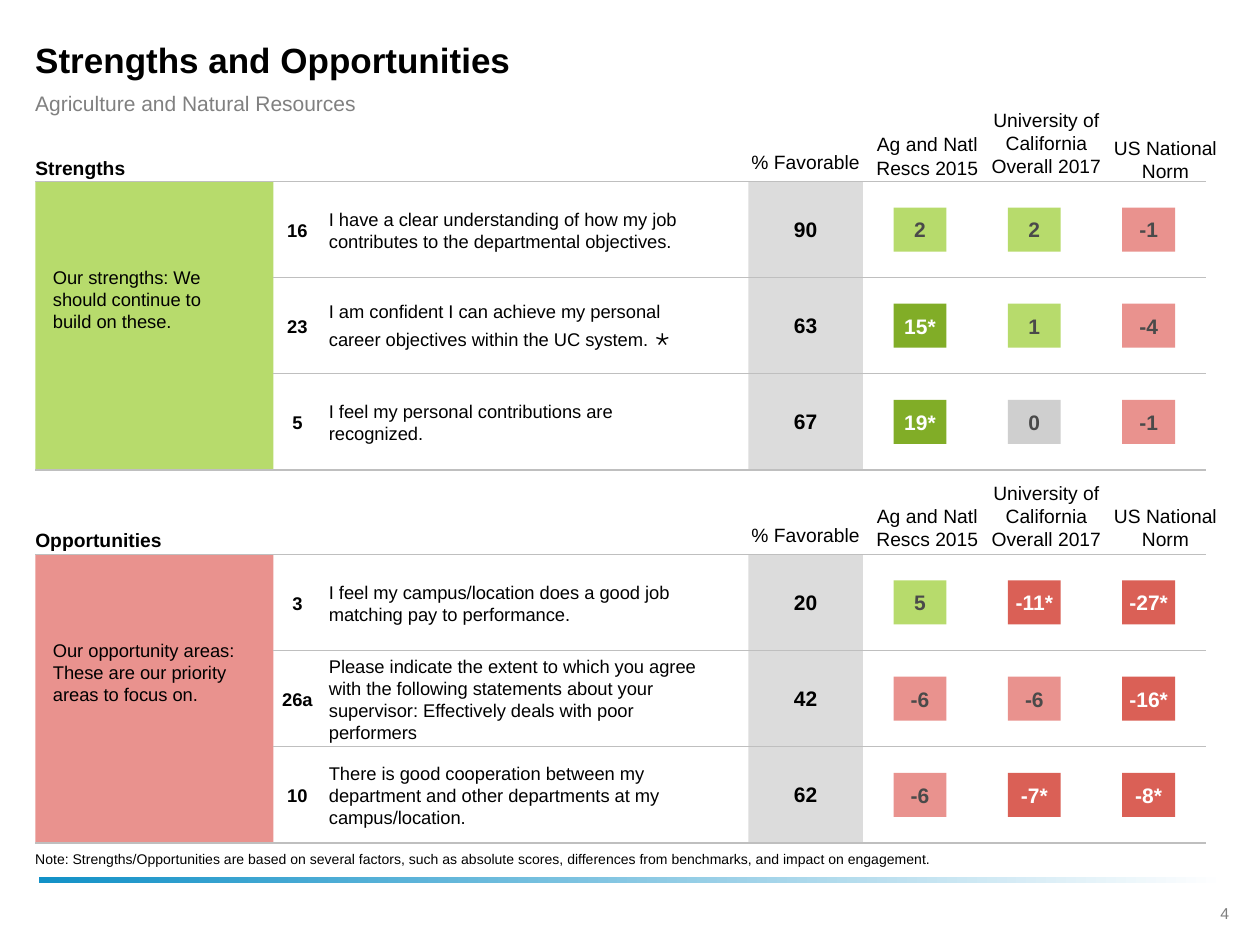
"""Build the Strengths and Opportunities survey slide."""
from dataclasses import dataclass
from typing import NamedTuple

from lxml import etree
from pptx import Presentation, util as u
from pptx.dml.color import RGBColor
from pptx.enum import shapes, text
from pptx.oxml.ns import qn


@dataclass(frozen=True)
class Theme:
    font: str = "Arial"
    ink: str = "000000"
    muted: str = "808080"
    page: str = "7F7F7F"
    chip_ink: str = "4A4A4A"
    white: str = "FFFFFF"
    accent: str = "1291C7"
    rule: str = "BFBFBF"
    band: str = "DCDCDC"
    neutral: str = "CFCFCF"
    good: str = "B7DB6C"
    very_good: str = "81AD27"
    bad: str = "E9928E"
    very_bad: str = "DA6056"
    title: float = 20
    score: float = 12
    head: float = 11
    body: float = 10.5
    star: float = 14
    note: float = 8
    page_number: float = 9
    rule_width: float = 0.75


class Box(NamedTuple):
    x: float
    y: float
    w: float
    h: float

    def emu(self) -> list[int]:
        return [u.Inches(v) for v in self]


class Item(NamedTuple):
    number: str
    question: str
    favorable: str
    scores: tuple[str, ...]
    star: str = ""


class Section(NamedTuple):
    name: str
    message: str
    color: str
    top: float
    head_shifts: tuple[float, ...]
    items: tuple[Item, ...]


T = Theme()
LEFT, WIDE = 0.28, 9.44
ROW_H = 2.29 / 3
SCORE_W = 3.63 / 4
FAVORABLE_X = 5.94
EDGES = [LEFT, 2.17] + [FAVORABLE_X + i * SCORE_W for i in range(5)]
CHIP_W, CHIP_H = 0.42, 0.35
HEAD_X, HEAD_STEP, HEAD_W, HEAD_H = 6.89, 0.945, 0.94, 1.25
BENCHMARKS = ("Ag and Natl Rescs 2015", "University of California Overall 2017", "US National Norm")
ANCHORS = {"t": text.MSO_ANCHOR.TOP, "m": text.MSO_ANCHOR.MIDDLE, "b": text.MSO_ANCHOR.BOTTOM}

SECTIONS = (
    Section("Strengths", "Our strengths: We should continue to build on these.", T.good, 1.44, (0.01, 0, 0.04), (
        Item("16", "I have a clear understanding of how my job contributes to the departmental objectives.",
             "90", ("2", "2", "-1")),
        Item("23", "I am confident I can achieve my personal career objectives within the UC system.",
             "63", ("15*", "1", "-4"), " ⋆"),
        Item("5", "I feel my personal contributions are recognized.", "67", ("19*", "0", "-1")),
    )),
    Section("Opportunities", "Our opportunity areas: These are our priority areas to focus on.", T.bad, 4.4, (0, 0, 0), (
        Item("3", "I feel my campus/location does a good job matching pay to performance.",
             "20", ("5", "-11*", "-27*")),
        Item("26a", "Please indicate the extent to which you agree with the following statements about your "
             "supervisor: Effectively deals with poor performers", "42", ("-6", "-6", "-16*")),
        Item("10", "There is good cooperation between my department and other departments at my campus/location.",
             "62", ("-6", "-7*", "-8*")),
    )),
)


def write(sp, words: str, size: float, color: str = T.ink, bold: bool = False, center: bool = False,
          anchor: str = "m", insets: tuple = (0, 0, 0, 0), wrap: bool = True):
    tf = sp.text_frame
    tf.text = words
    tf.word_wrap = wrap
    tf.vertical_anchor = ANCHORS[anchor]
    tf.margin_left, tf.margin_top, tf.margin_right, tf.margin_bottom = map(u.Inches, insets)
    p = tf.paragraphs[0]
    p.alignment = text.PP_ALIGN.CENTER if center else text.PP_ALIGN.LEFT
    style(p.runs[0], size, color, bold)
    return p


def style(r, size: float, color: str, bold: bool = False) -> None:
    r.font.name, r.font.size, r.font.bold = T.font, u.Pt(size), bold
    r.font.color.rgb = RGBColor.from_string(color)


def label(s, box: Box, words: str, size: float, **options):
    return write(s.shapes.add_textbox(*box.emu()), words, size, **options)


def block(s, box: Box, color: str):
    sp = s.shapes.add_shape(shapes.MSO_SHAPE.RECTANGLE, *box.emu())
    sp.shadow.inherit = False
    sp.fill.solid()
    sp.fill.fore_color.rgb = RGBColor.from_string(color)
    sp.line.fill.background()
    return sp


def rule(s, x1: float, x2: float, y: float) -> None:
    c = s.shapes.add_connector(shapes.MSO_CONNECTOR.STRAIGHT, *map(u.Inches, (x1, y, x2, y)))
    c.line.color.rgb = RGBColor.from_string(T.rule)
    c.line.width = u.Pt(T.rule_width)
    etree.SubElement(c._element.spPr, qn("a:effectLst"))


def chip(s, column: int, middle: float, score: str) -> None:
    value, starred = int(score.rstrip("*")), score.endswith("*")
    if value > 0:
        color = T.very_good if starred else T.good
    elif value < 0:
        color = T.very_bad if starred else T.bad
    else:
        color = T.neutral
    x = EDGES[column] + (SCORE_W - CHIP_W) / 2
    sp = block(s, Box(x, middle - CHIP_H / 2, CHIP_W, CHIP_H), color)
    write(sp, score, T.score, color=T.white if starred else T.chip_ink, bold=True, center=True,
          insets=(0, 0.05, 0, 0.05), wrap=False)


def item_row(s, item: Item, y: float) -> None:
    middle = y + ROW_H / 2
    label(s, Box(EDGES[1], middle - 0.08, 0.38, 0.17), item.number, T.body, bold=True, center=True)
    p = label(s, Box(2.54, y + 0.03, 3.21, 0.71), item.question, T.body, insets=(0.07, 0, 0.1, 0))
    if item.star:
        r = p.add_run()
        r.text = item.star
        style(r, T.star, T.ink)
    label(s, Box(FAVORABLE_X, middle - 0.1, SCORE_W, 0.19), item.favorable, T.score, bold=True, center=True)
    for column, score in enumerate(item.scores, start=3):
        chip(s, column, middle, score)


def section(s, data: Section) -> None:
    rows = len(data.items)
    side = EDGES[1] - LEFT
    block(s, Box(LEFT, data.top, side, rows * ROW_H), data.color)
    for i in range(rows):
        block(s, Box(FAVORABLE_X, data.top + i * ROW_H, SCORE_W, ROW_H), T.band)
    for i in range(rows + 1):
        first = 0 if i in (0, rows) else 1
        for x1, x2 in zip(EDGES[first:], EDGES[first + 1:]):
            rule(s, x1, x2, data.top + i * ROW_H)
    label(s, Box(LEFT, data.top - 0.25, side, 0.23), data.name, T.head, bold=True, anchor="b")
    label(s, Box(FAVORABLE_X, data.top - 0.25, SCORE_W, 0.23), "% Favorable", T.head, center=True, anchor="t")
    label(s, Box(0.42, data.top + 0.67, 1.51, 0.92), data.message, T.body, anchor="t")
    for i, item in enumerate(data.items):
        item_row(s, item, data.top + i * ROW_H)
    for i, (name, shift) in enumerate(zip(BENCHMARKS, data.head_shifts)):
        label(s, Box(HEAD_X + i * HEAD_STEP, data.top - 1.27 + shift, HEAD_W, HEAD_H), name, T.head,
              center=True, anchor="b", insets=(0.03, 0, 0.03, 0.01))


def footer(s) -> None:
    bar = block(s, Box(0.31, 6.96, 9.42, 0.05), T.accent)
    bar.fill.gradient()
    bar.fill.gradient_angle = 0
    for stop, color in zip(bar.fill.gradient_stops, (T.accent, T.white)):
        stop.color.rgb = RGBColor.from_string(color)
    label(s, Box(9.46, 7.12, 0.52, 0.25), "4", T.page_number, color=T.page, center=True)
    label(s, Box(LEFT, 6.75, WIDE, 0.14), "Note: Strengths/Opportunities are based on several factors, such as "
          "absolute scores, differences from benchmarks, and impact on engagement.", T.note)


def main() -> None:
    prs = Presentation()
    prs.slide_width, prs.slide_height = u.Inches(10), u.Inches(7.5)
    s = prs.slides.add_slide(prs.slide_layouts[6])
    heading = (0, 0, 0.35, 0)
    label(s, Box(LEFT, 0.28, WIDE, 0.38), "Strengths and Opportunities", T.title, bold=True, insets=heading)
    label(s, Box(LEFT, 0.71, WIDE, 0.21), "Agriculture and Natural Resources", T.score, color=T.muted, insets=heading)
    for data in SECTIONS:
        section(s, data)
    footer(s)
    prs.save("out.pptx")


if __name__ == "__main__":
    main()
